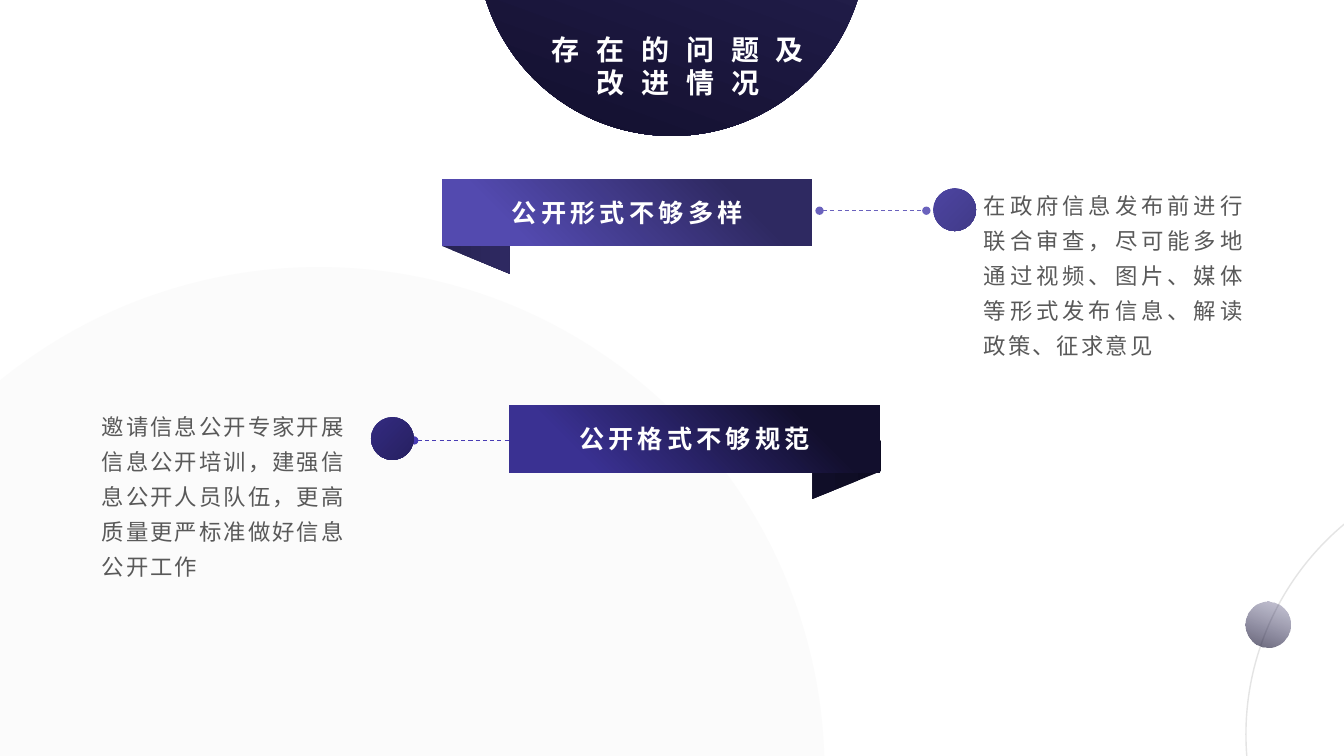
from lxml import etree
from pptx import Presentation
from pptx.dml.color import RGBColor
from pptx.enum.dml import MSO_LINE
from pptx.enum.shapes import MSO_CONNECTOR, MSO_SHAPE
from pptx.enum.text import MSO_ANCHOR, PP_ALIGN
from pptx.oxml.ns import qn
from pptx.util import Pt

OVAL, RECT, FOLD = MSO_SHAPE.OVAL, MSO_SHAPE.RECTANGLE, MSO_SHAPE.PARALLELOGRAM
STRAIGHT, DASH = MSO_CONNECTOR.STRAIGHT, MSO_LINE.DASH
LEFT, CENTER, JUSTIFY = PP_ALIGN.LEFT, PP_ALIGN.CENTER, PP_ALIGN.JUSTIFY
TOP, MIDDLE = MSO_ANCHOR.TOP, MSO_ANCHOR.MIDDLE

FONT = "Noto Sans CJK SC"
WHITE = RGBColor(0xFF, 0xFF, 0xFF)
TEXT_GRAY = RGBColor(0x59, 0x59, 0x59)
RING_GRAY = RGBColor(0xA6, 0xA6, 0xA6)
PALE_GRAY = RGBColor(0xF2, 0xF2, 0xF2)
NAVY = RGBColor(0x2E, 0x29, 0x61)
DEEP_NAVY = RGBColor(0x12, 0x0F, 0x2D)
VIOLET = RGBColor(0x53, 0x4A, 0xAF)
INDIGO = RGBColor(0x3A, 0x31, 0x92)
LINE_VIOLET = RGBColor(0x6A, 0x62, 0xBD)
LINE_INDIGO = RGBColor(0x48, 0x3C, 0xB4)
DOT_VIOLET = (RGBColor(0x4D, 0x45, 0xA2), RGBColor(0x41, 0x3A, 0x88))
DOT_INDIGO = (RGBColor(0x34, 0x2B, 0x81), RGBColor(0x26, 0x20, 0x60))
FOLD_NAVY = (RGBColor(0x27, 0x23, 0x52), NAVY)
FOLD_BLACK = (RGBColor(0x0D, 0x0B, 0x22), RGBColor(0x10, 0x0E, 0x28))

TITLE = ["存在的问题及", "改进情况"]
ISSUES = [
    {
        "name": "公开格式不够规范", "banner": (363.6, 289.4, 265, 48.2),
        "colors": (DEEP_NAVY, INDIGO),
        "fold": (583.9, 311, 41.8, 49), "fold_colors": FOLD_BLACK, "flip": True,
        "link": (295.9, 371.5, 314.6), "link_color": LINE_INDIGO,
        "dot": (265, 298), "dot_colors": DOT_INDIGO,
        "action": "邀请信息公开专家开展信息公开培训，建强信息公开人员队伍，更高质量更严标准做好信息公开工作",
        "action_box": (72.7, 289.4, 175.7, 92.2), "align": LEFT,
    },
    {
        "name": "公开形式不够多样", "banner": (316, 128.2, 264.2, 47.5),
        "colors": (NAVY, VIOLET),
        "fold": (319, 150.5, 41.8, 48.2), "fold_colors": FOLD_NAVY, "flip": False,
        "link": (585.4, 661.7, 150.5), "link_color": LINE_VIOLET,
        "dot": (666.7, 134.6), "dot_colors": DOT_VIOLET,
        "action": "在政府信息发布前进行联合审查，尽可能多地通过视频、图片、媒体等形式发布信息、解读政策、征求意见",
        "action_box": (702.7, 131.8, 186.5, 138.2), "align": JUSTIFY,
    },
]
DOT_SIZE = 30.5

deck = Presentation()
deck.slide_width, deck.slide_height = Pt(960), Pt(540)
page = deck.slides.add_slide(deck.slide_layouts[6])


def points(values):
    return [Pt(value) for value in values]


def add_alpha(color_node, percent):
    etree.SubElement(color_node, qn("a:alpha"), val=str(percent * 1000))


def add_shape(kind, frame):
    shape = page.shapes.add_shape(kind, *points(frame))
    shape.shadow.inherit = False
    shape.fill.background()
    shape.line.fill.background()
    return shape


def fill_gradient(shape, colors, angle, stops=(0, 100), alphas=(100, 100)):
    gradient = etree.Element(qn("a:gradFill"), rotWithShape="1")
    stop_list = etree.SubElement(gradient, qn("a:gsLst"))
    for color, stop, alpha in zip(colors, stops, alphas):
        node = etree.SubElement(stop_list, qn("a:gs"), pos=str(stop * 1000))
        color_node = etree.SubElement(node, qn("a:srgbClr"), val=str(color))
        if alpha < 100:
            add_alpha(color_node, alpha)
    etree.SubElement(gradient, qn("a:lin"), ang=str(angle * 60000), scaled="0")
    properties = shape.element.spPr
    properties.replace(properties.find(qn("a:noFill")), gradient)


def write_text(shape, lines, size, color, bold=False, align=LEFT, anchor=TOP,
               tracking=0, leading=None, wrap=True, inset=0):
    frame = shape.text_frame
    frame.word_wrap = wrap
    frame.vertical_anchor = anchor
    frame.margin_left = frame.margin_right = Pt(inset)
    frame.margin_top = frame.margin_bottom = Pt(inset / 2)
    for index, line in enumerate(lines):
        para = frame.add_paragraph() if index else frame.paragraphs[0]
        para.alignment = align
        para.line_spacing = leading
        span = para.add_run()
        span.text = line
        span.font.name, span.font.size = FONT, Pt(size)
        span.font.bold, span.font.color.rgb = bold, color
        properties = span.font._element
        properties.set("spc", str(round(tracking * 100)))
        east_asian = etree.Element(qn("a:ea"), typeface=FONT)
        properties.find(qn("a:latin")).addnext(east_asian)


def add_text(frame, lines, **style):
    box = page.shapes.add_textbox(*points(frame))
    write_text(box, lines, **style)


def add_link(start, end, y, color):
    link = page.shapes.add_connector(STRAIGHT, *points((start, y, end, y)))
    link.line.color.rgb = color
    link.line.width = Pt(0.75)
    link.line.dash_style = DASH
    outline = link.line._get_or_add_ln()
    for end_name in ("a:headEnd", "a:tailEnd"):
        etree.SubElement(outline, qn(end_name), type="oval")
    etree.SubElement(link.element.spPr, qn("a:effectLst"))


title_disc = add_shape(OVAL, (340.5, -181.5, 278.6, 278.6))
fill_gradient(title_disc, (NAVY, DEEP_NAVY), 110)
add_text((326.9, 23, 314.6, 36.7), TITLE, size=20, color=WHITE, bold=True,
         align=CENTER, tracking=12, wrap=False)

ring = add_shape(OVAL, (890, 329, 391, 391))
ring.line.color.rgb = RING_GRAY
ring.line.width = Pt(1)
add_alpha(ring.element.spPr.find(".//" + qn("a:srgbClr")), 30)

ring_dot = add_shape(OVAL, (889.6, 429.8, 32.5, 32.5))
fill_gradient(ring_dot, (NAVY, DEEP_NAVY), 110, alphas=(26, 65))

pale_disc = add_shape(OVAL, (-133.2, 190.8, 722.2, 722.2))
pale_disc.fill.solid()
pale_disc.fill.fore_color.rgb = PALE_GRAY
add_alpha(pale_disc.element.spPr.find(".//" + qn("a:srgbClr")), 29)

for issue in ISSUES:
    fold = add_shape(FOLD, issue["fold"])
    fold.adjustments[0] = 0.474
    fold.rotation = 270
    if issue["flip"]:
        fold.element.spPr.find(qn("a:xfrm")).set("flipV", "1")
    fill_gradient(fold, issue["fold_colors"], 90)

    add_link(*issue["link"], issue["link_color"])
    dot = add_shape(OVAL, (*issue["dot"], DOT_SIZE, DOT_SIZE))
    fill_gradient(dot, issue["dot_colors"], 44)
    add_text(issue["action_box"], [issue["action"]], size=16, color=TEXT_GRAY,
             align=issue["align"], tracking=1.5, leading=1.3)

    banner = add_shape(RECT, issue["banner"])
    fill_gradient(banner, issue["colors"], 135, stops=(20, 80))
    write_text(banner, [issue["name"]], size=18, color=WHITE, bold=True,
               align=CENTER, anchor=MIDDLE, tracking=3, inset=7.2)

deck.save("out.pptx")
